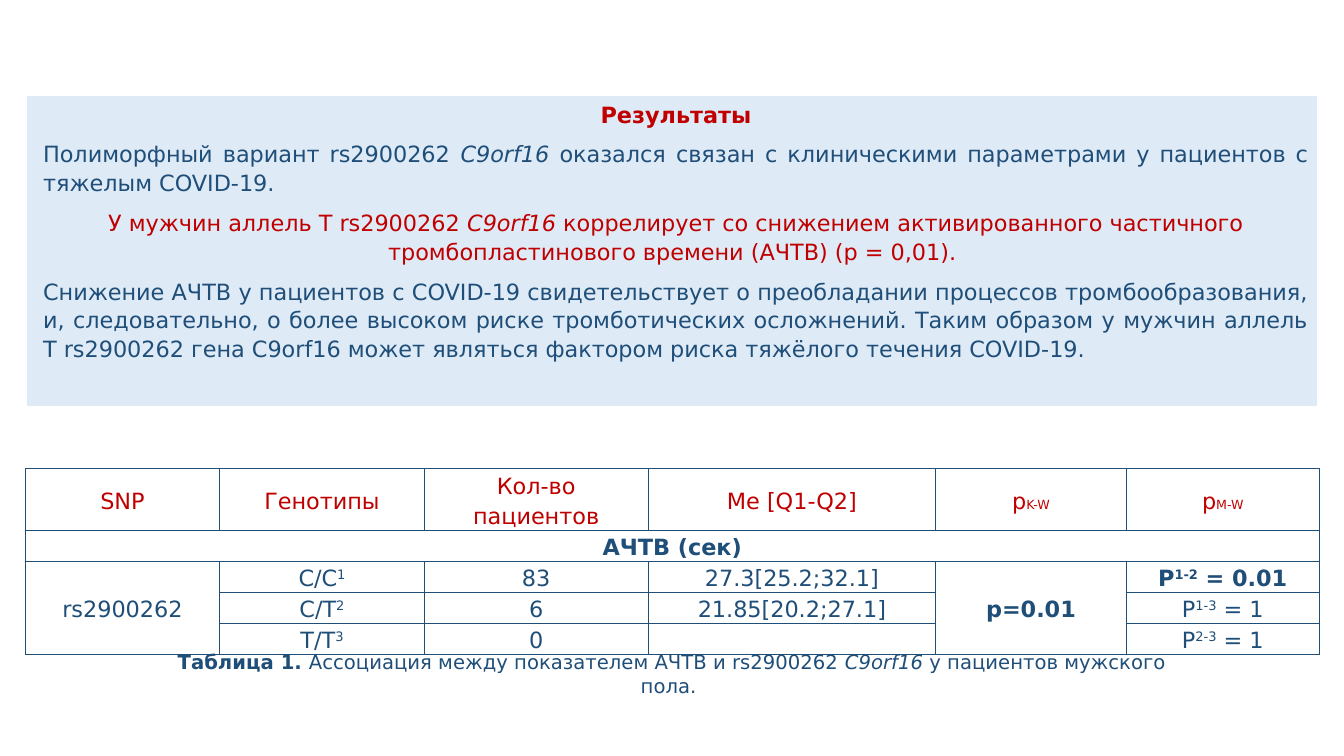
from dataclasses import dataclass

from lxml import etree
from pptx import Presentation
from pptx.dml.color import RGBColor
from pptx.enum.shapes import MSO_SHAPE
from pptx.enum.text import MSO_ANCHOR, MSO_AUTO_SIZE, PP_ALIGN as Align
from pptx.oxml.ns import qn
from pptx.util import Pt

FONT = "DejaVu Sans"
NAVY, RED, PALE, WHITE = "1F4E79", "C00000", "DEEBF7", "FFFFFF"


@dataclass
class Span:
    text: str
    color: str = NAVY
    size: float = 16
    bold: bool = False
    italic: bool = False
    raised: bool = False


@dataclass
class Para:
    spans: list[Span]
    align: Align = Align.CENTER
    line: float = 1.0
    after: float = 0


@dataclass
class Cell:
    row: int
    col: int
    spans: list[Span]
    rows: int = 1
    cols: int = 1


def rgb(color: str) -> RGBColor:
    return RGBColor.from_string(color)


def write_para(para, content: Para) -> None:
    para.alignment = content.align
    para.line_spacing = content.line
    para.space_after = Pt(content.after)
    for span in content.spans:
        run = para.add_run()
        run.text = span.text
        font = run.font
        font.name, font.size = FONT, Pt(span.size)
        font.bold, font.italic = span.bold, span.italic
        font.color.rgb = rgb(span.color)
        if span.raised:
            font._element.set("baseline", "30000")


def write_frame(frame, paras: list[Para]) -> None:
    frame.word_wrap = True
    frame.auto_size = MSO_AUTO_SIZE.NONE
    frame.vertical_anchor = MSO_ANCHOR.TOP
    for index, content in enumerate(paras):
        para = frame.add_paragraph() if index else frame.paragraphs[0]
        write_para(para, content)


def format_cell(cell) -> None:
    cell.margin_left = cell.margin_right = Pt(5)
    cell.margin_top = cell.margin_bottom = 0
    cell.vertical_anchor = MSO_ANCHOR.MIDDLE
    properties = cell._tc.get_or_add_tcPr()
    for side in ("lnL", "lnR", "lnT", "lnB"):
        border = etree.SubElement(properties, qn(f"a:{side}"), w=str(Pt(1)))
        fill = etree.SubElement(border, qn("a:solidFill"))
        etree.SubElement(fill, qn("a:srgbClr"), val=NAVY)
    cell.fill.solid()
    cell.fill.fore_color.rgb = rgb(WHITE)


def add_results(page) -> None:
    box = page.shapes.add_shape(MSO_SHAPE.RECTANGLE, Pt(18), Pt(67), Pt(924), Pt(224.6))
    box.shadow.inherit = False
    box.fill.solid()
    box.fill.fore_color.rgb = rgb(PALE)
    box.line.color.rgb = rgb(WHITE)
    box.line.width = Pt(3)
    paras = [
        Para([Span("Результаты", RED, bold=True)]),
        Para([
            Span("Полиморфный вариант rs2900262 "),
            Span("C9orf16", italic=True),
            Span(" оказался связан с клиническими параметрами у пациентов "
                 "с тяжелым COVID-19. "),
        ], Align.JUSTIFY),
        Para([
            Span("У мужчин аллель T rs2900262 ", RED),
            Span("C9orf16", RED, italic=True),
            Span(" коррелирует со снижением активированного частичного "
                 "тромбопластинового времени (АЧТВ) (p = 0,01). ", RED),
        ]),
        Para([
            Span("Снижение АЧТВ у пациентов с COVID-19 свидетельствует о преобладании "
                 "процессов тромбообразования, и, следовательно, о более высоком риске "
                 "тромботических осложнений. Таким образом у мужчин аллель T rs2900262 "
                 "гена C9orf16 может являться фактором риска тяжёлого течения COVID-19. "),
        ], Align.JUSTIFY),
    ]
    for para in paras:
        para.line, para.after = 1.07, 8
    write_frame(box.text_frame, paras)
    for para in box.text_frame.paragraphs:
        properties = para._p.get_or_add_pPr()
        properties.set("marL", str(Pt(5.7)))
        properties.set("indent", "0")


def table_cells() -> list[Cell]:
    headers = ["SNP", "Генотипы", "Кол-во пациентов", "Me [Q1-Q2]"]
    cells = [Cell(0, col, [Span(text, RED)]) for col, text in enumerate(headers)]
    for col, test in ((4, "K-W"), (5, "M-W")):
        cells.append(Cell(0, col, [Span("p", RED), Span(test, RED, 9)]))
    cells += [
        Cell(1, 0, [Span("АЧТВ (сек)", bold=True)], cols=6),
        Cell(2, 0, [Span("rs2900262")], rows=3),
        Cell(2, 4, [Span("p=0.01", bold=True)], rows=3),
    ]
    genotypes = [
        ("C/C", "83", "27.3[25.2;32.1]", "1-2", " = 0.01"),
        ("C/T", "6", "21.85[20.2;27.1]", "1-3", " = 1"),
        ("T/T", "0", "", "2-3", " = 1"),
    ]
    for number, (genotype, count, median, pair, value) in enumerate(genotypes, 1):
        row, bold = number + 1, number == 1
        cells += [
            Cell(row, 1, [Span(genotype), Span(str(number), raised=True)]),
            Cell(row, 2, [Span(count)]),
            Cell(row, 3, [Span(median)] if median else []),
            Cell(row, 5, [Span("P", bold=bold), Span(pair, bold=bold, raised=True),
                          Span(value, bold=bold)]),
        ]
    return cells


def add_genotype_table(page) -> None:
    widths = [139, 146, 160, 205.5, 136, 138]
    heights = [44.2] + [22.1] * 4
    table = page.shapes.add_table(
        len(heights), len(widths), Pt(18), Pt(334.8), Pt(sum(widths)), Pt(sum(heights))
    ).table
    table.first_row = table.horz_banding = False
    for column, width in zip(table.columns, widths):
        column.width = Pt(width)
    for row, height in zip(table.rows, heights):
        row.height = Pt(height)
    for cell in table.iter_cells():
        format_cell(cell)
    for item in table_cells():
        cell = table.cell(item.row, item.col)
        if item.rows * item.cols > 1:
            cell.merge(table.cell(item.row + item.rows - 1, item.col + item.cols - 1))
        para = cell.text_frame.paragraphs[0]
        write_para(para, Para(item.spans, line=1.15, after=10))
        if not item.spans:
            # Keeps the empty cell from stretching its row
            etree.SubElement(para._p, qn("a:endParaRPr"), sz="1200")


def add_caption(page) -> None:
    box = page.shapes.add_textbox(Pt(100), Pt(460.8), Pt(759.6), Pt(24.5))
    write_frame(box.text_frame, [Para([
        Span("Таблица 1. ", size=14, bold=True),
        Span("Ассоциация между показателем АЧТВ и rs2900262 ", size=14),
        Span("C9orf16", size=14, italic=True),
        Span(" у пациентов мужского пола. ", size=14),
    ])])


def main() -> None:
    deck = Presentation()
    deck.slide_width, deck.slide_height = Pt(960), Pt(540)
    page = deck.slides.add_slide(deck.slide_layouts[6])
    add_results(page)
    add_genotype_table(page)
    add_caption(page)
    deck.save("out.pptx")


if __name__ == "__main__":
    main()
